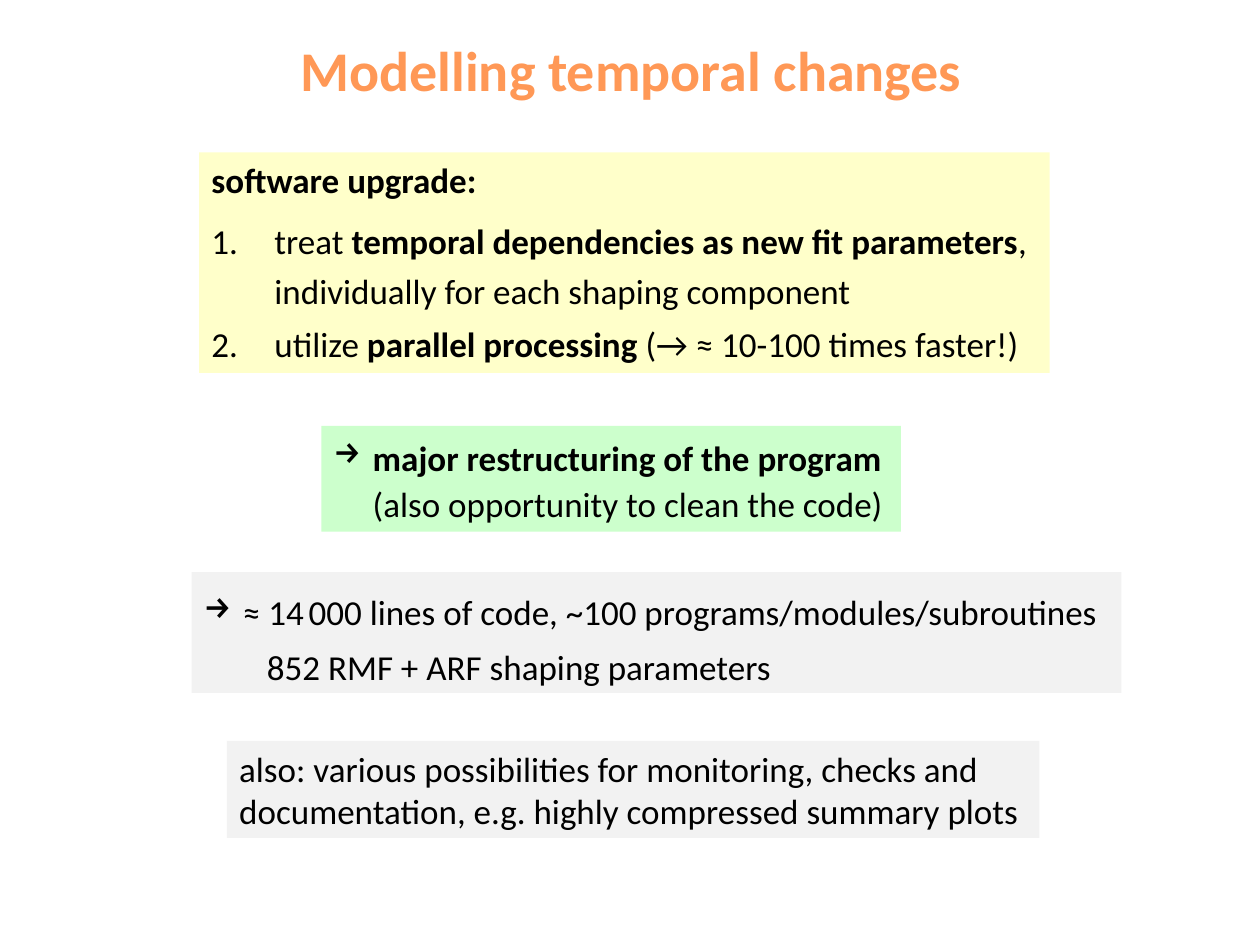
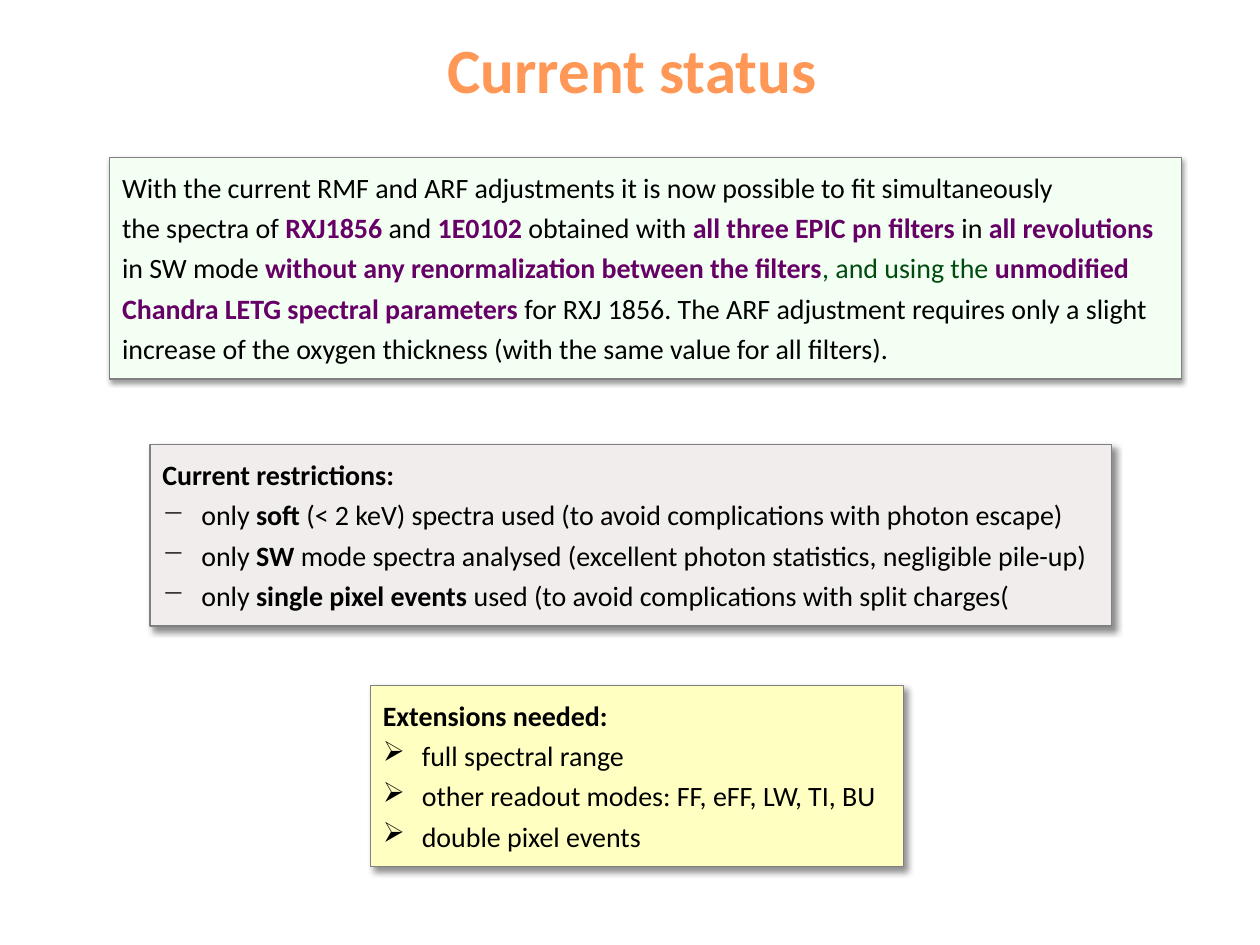
"""Build two slides on modelling temporal changes and the current status."""
from dataclasses import dataclass
from typing import NamedTuple, Optional

from lxml import etree
from pptx import Presentation
from pptx import util as u
from pptx.dml.color import RGBColor
from pptx.enum import shapes, text
from pptx.oxml import parse_xml
from pptx.oxml.ns import nsdecls, qn

PX = 9144
FONT = "Calibri"
BLACK = RGBColor(0x00, 0x00, 0x00)
GREY = RGBColor(0x80, 0x80, 0x80)
PURPLE = RGBColor(0x66, 0x00, 0x66)
DARK_GREEN = RGBColor(0x00, 0x4C, 0x0F)
CREAM = RGBColor(0xFF, 0xFF, 0xCA)
LIGHT_GREY = RGBColor(0xF2, 0xF2, 0xF2)
GREEN = RGBColor(0xCC, 0xFF, 0xCC)
MINT = RGBColor(0xF4, 0xFF, 0xF4)
ROSE_GREY = RGBColor(0xF2, 0xED, 0xED)
YELLOW = RGBColor(0xFF, 0xFF, 0xC1)
TITLE_STOPS = (
    (0, RGBColor(0x9D, 0x47, 0x00)),
    (78, RGBColor(0xFF, 0x98, 0x56)),
    (100, RGBColor(0xFF, 0xF5, 0xF1)),
)
NUMBERED = "1."
HANGING = 31


class Shadow(NamedTuple):
    """Opacity in percent, blur and distance in points, angle in degrees."""
    opacity: int
    blur: float
    distance: float
    angle: int


class Area(NamedTuple):
    """Left, top, width and height in px."""
    left: int
    top: int
    width: int
    height: int


class Span(NamedTuple):
    """Text in one style; a newline is a line break."""
    words: str
    bold: bool = False
    color: RGBColor = BLACK
    size: Optional[int] = None


@dataclass(frozen=True)
class Line:
    """One paragraph with its bullet, indent and spacing."""
    spans: tuple[Span, ...]
    bullet: str = ""
    indent: int = 0
    spacing: float = 1.0
    before: int = 0


@dataclass(frozen=True)
class Panel:
    """A filled text panel, outlined when it has a shadow."""
    area: Area
    fill: RGBColor
    size: int
    lines: tuple[Line, ...]
    shadow: Optional[Shadow] = None


@dataclass(frozen=True)
class Page:
    """A title and the panels below it."""
    title: str
    title_area: Area
    title_size: int
    panels: tuple[Panel, ...]


def bold(words: str) -> Span:
    """Return a bold black span."""
    return Span(words, True)


def key(words: str) -> Span:
    """Return a bold purple span."""
    return Span(words, True, PURPLE)


def status_list(heading: str, bullet: str, *items: tuple[Span, ...]) -> tuple[Line, ...]:
    """Return a bold heading followed by bulleted lines."""
    return (Line((bold(heading),), spacing=1.2),
            *(Line(item, bullet, HANGING, 1.2) for item in items))


SOFT_SHADOW = Shadow(38, 3.1, 1.6, 90)
CORNER_SHADOW = Shadow(43, 4, 3, 45)
TITLE_SHADOW = Shadow(100, 1, 1, 45)

PAGES = (
    Page("Modelling temporal changes", Area(225, 23, 552, 64), 32, (
        Panel(Area(158, 121, 675, 175), CREAM, 20, (
            Line((bold("software upgrade:"),)),
            Line((Span("treat "), bold("temporal dependencies as new fit parameters"),
                  Span(",\nindividually for each shaping component")), NUMBERED, 50, 1.2, 6),
            Line((Span("utilize "), bold("parallel processing "),
                  Span("(→ ≈ 10-100 times faster!)")), NUMBERED, 50, before=6),
        )),
        Panel(Area(152, 454, 738, 96), LIGHT_GREY, 20, (
            Line((Span("≈ 14"), Span(" ", size=12),
                  Span("000 lines of code, ~100 programs/modules/subroutines")),
                 "→", HANGING, 1.3),
            Line((Span("852 RMF + ARF shaping parameters"),), indent=50, spacing=1.3),
        )),
        Panel(Area(180, 588, 645, 77), LIGHT_GREY, 20, (
            Line((Span("also: various possibilities for monitoring, checks and\n"
                       "documentation, e.g. highly compressed summary plots"),)),
        )),
        Panel(Area(255, 338, 460, 84), GREEN, 20, (
            Line((bold("major restructuring of the program\n"),
                  Span("(also opportunity to clean the code)")), "→", HANGING, 1.1),
        )),
    )),
    Page("Current status", Area(342, 19, 319, 71), 36, (
        Panel(Area(87, 125, 851, 176), MINT, 16, (
            Line((
                Span("With the current RMF and ARF adjustments it is now possible "
                     "to fit simultaneously\nthe spectra of "),
                key("RXJ1856 "), Span("and "), key("1E0102 "), Span("obtained with "),
                key("all three EPIC pn filters "), Span("in "), key("all revolutions\n"),
                Span("in SW mode "), key("without any renormalization between the filters"),
                Span(", and using the ", color=DARK_GREEN),
                key("unmodified\nChandra LETG spectral parameters "),
                Span("for RXJ 1856. The ARF adjustment requires only a slight\n"
                     "increase of the oxygen thickness (with the same value for all filters)."),
            ), spacing=1.2),
        ), SOFT_SHADOW),
        Panel(Area(119, 353, 763, 144), ROSE_GREY, 16, status_list(
            "Current restrictions:", "−",
            (Span("only "), bold("soft"),
             Span(" (< 2 keV) spectra used (to avoid complications with photon escape)")),
            (Span("only "), bold("SW "),
             Span("mode spectra analysed (excellent photon statistics, negligible pile-up)")),
            (Span("only "), bold("single pixel events "),
             Span("used (to avoid complications with split charges(")),
        ), CORNER_SHADOW),
        Panel(Area(294, 544, 423, 144), YELLOW, 16, status_list(
            "Extensions needed:", "➢",
            (Span("full spectral range"),),
            (Span("other readout modes: FF, eFF, LW, TI, BU"),),
            (Span("double pixel events"),),
        ), CORNER_SHADOW),
    )),
)


def place(area: Area) -> list[int]:
    """Return the area in EMU."""
    return [length * PX for length in area]


def shadow_effect(shadow: Shadow) -> etree._Element:
    """Return an effect list with one black outer shadow."""
    return parse_xml(
        f'<a:effectLst {nsdecls("a")}><a:outerShdw blurRad="{u.Pt(shadow.blur)}" '
        f'dist="{u.Pt(shadow.distance)}" dir="{shadow.angle * 60000}" algn="tl" '
        f'rotWithShape="0"><a:srgbClr val="{BLACK}"><a:alpha val="{shadow.opacity * 1000}"/>'
        '</a:srgbClr></a:outerShdw></a:effectLst>')


def title_gradient() -> etree._Element:
    """Return the vertical gradient that fills the titles."""
    stops = "".join(f'<a:gs pos="{position * 1000}"><a:srgbClr val="{color}"/></a:gs>'
                    for position, color in TITLE_STOPS)
    return parse_xml(f'<a:gradFill {nsdecls("a")}><a:gsLst>{stops}</a:gsLst>'
                     '<a:lin ang="5400000" scaled="0"/></a:gradFill>')


def fit_frame(frame, anchor: text.MSO_ANCHOR) -> None:
    """Let the frame grow with its unwrapped text."""
    frame.word_wrap = False
    frame.auto_size = text.MSO_AUTO_SIZE.SHAPE_TO_FIT_TEXT
    frame.vertical_anchor = anchor


def add_title(slide, page: Page) -> None:
    """Add the centred gradient title with its text shadow."""
    box = slide.shapes.add_textbox(*place(page.title_area))
    frame = box.text_frame
    fit_frame(frame, text.MSO_ANCHOR.MIDDLE)
    frame.text = page.title
    paragraph = frame.paragraphs[0]
    paragraph.alignment = text.PP_ALIGN.CENTER
    font = paragraph.runs[0].font
    font.size, font.bold = u.Pt(page.title_size), True
    properties = paragraph.runs[0]._r.get_or_add_rPr()
    properties.append(title_gradient())
    properties.append(shadow_effect(TITLE_SHADOW))
    font.name = FONT


def write_span(paragraph, span: Span, panel_size: int) -> None:
    """Append a span to the paragraph, with its line breaks."""
    size = u.Pt(span.size or panel_size)
    for index, words in enumerate(span.words.split("\n")):
        if index:
            paragraph.add_line_break()
            etree.SubElement(paragraph._p[-1], qn("a:rPr"), sz=str(size.centipoints))
        if words:
            run = paragraph.add_run()
            run.text = words
            run.font.name, run.font.size, run.font.bold = FONT, size, span.bold
            run.font.color.rgb = span.color


def write_line(paragraph, line: Line, size: int) -> None:
    """Format the paragraph and fill it with the spans of the line."""
    paragraph.alignment = text.PP_ALIGN.LEFT
    paragraph.line_spacing = line.spacing
    paragraph.space_before = u.Pt(line.before)
    properties = paragraph._p.get_or_add_pPr()
    properties.set("marL", str(line.indent * PX))
    if line.bullet:
        properties.set("indent", str(-line.indent * PX))
        if line.bullet == NUMBERED:
            etree.SubElement(properties, qn("a:buAutoNum"), type="arabicPeriod")
        else:
            etree.SubElement(properties, qn("a:buChar"), char=line.bullet)
    for span in line.spans:
        write_span(paragraph, span, size)


def add_panel(slide, panel: Panel) -> None:
    """Add a filled rectangle with its lines of text."""
    shape = slide.shapes.add_shape(shapes.MSO_SHAPE.RECTANGLE, *place(panel.area))
    shape.fill.solid()
    shape.fill.fore_color.rgb = panel.fill
    frame = shape.text_frame
    fit_frame(frame, text.MSO_ANCHOR.TOP)
    if panel.shadow:
        shape.line.color.rgb = GREY
        shape.line.width = u.Pt(0.75)
        shape._element.spPr.append(shadow_effect(panel.shadow))
        frame.margin_bottom = 10 * PX
    else:
        shape.line.fill.background()
        shape.shadow.inherit = False
    for index, line in enumerate(panel.lines):
        paragraph = frame.add_paragraph() if index else frame.paragraphs[0]
        write_line(paragraph, line, panel.size)


def main() -> None:
    """Build the slides and save the presentation."""
    presentation = Presentation()
    presentation.slide_width, presentation.slide_height = 1000 * PX, 750 * PX
    for page in PAGES:
        slide = presentation.slides.add_slide(presentation.slide_layouts[6])
        for panel in page.panels:
            add_panel(slide, panel)
        add_title(slide, page)
    presentation.save("out.pptx")


if __name__ == "__main__":
    main()
